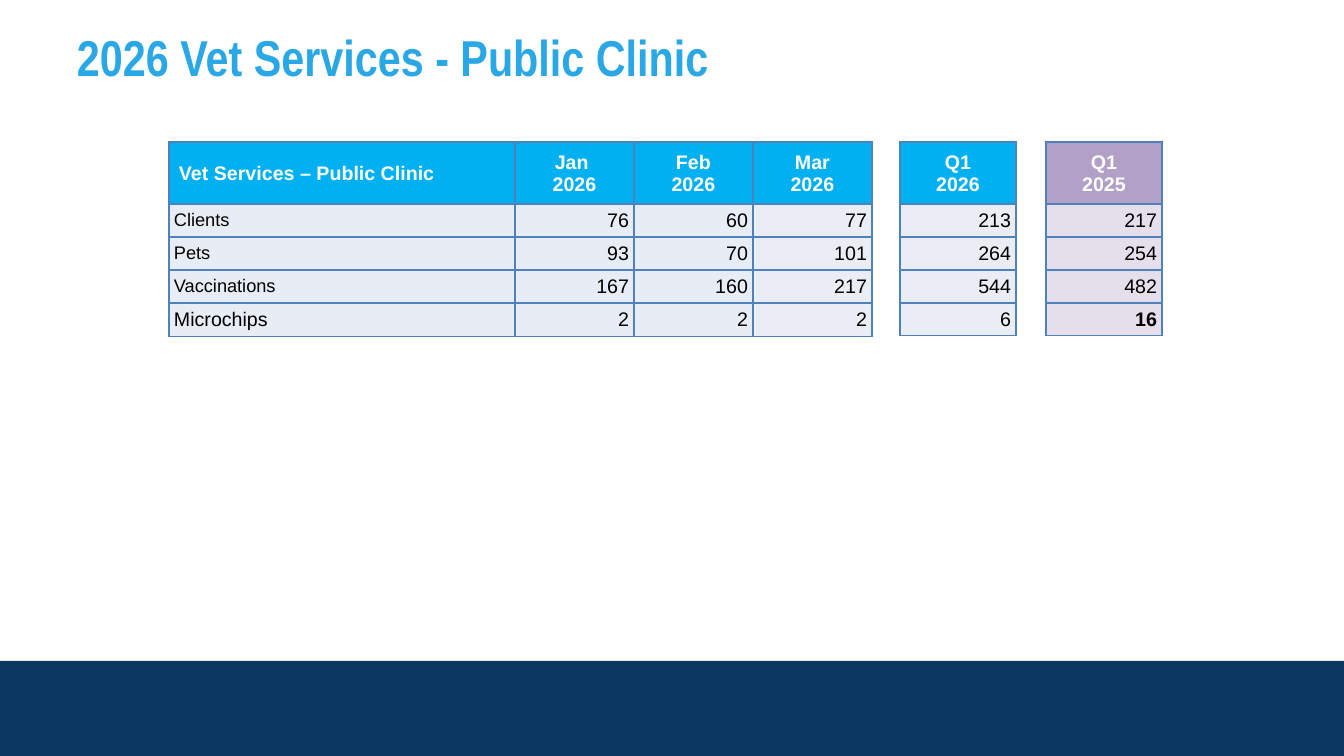
"""Build the 2026 public clinic vet services slide."""
from lxml import etree
from pptx import Presentation
from pptx.dml.color import RGBColor
from pptx.enum.shapes import MSO_SHAPE as Shape
from pptx.enum.text import MSO_ANCHOR as Anchor, PP_ALIGN as Align
from pptx.oxml.ns import qn
from pptx.util import Pt

TITLE = "2026 Vet Services - Public Clinic"
LABELS = ("Vet Services – Public Clinic", "Clients", "Pets", "Vaccinations", "Microchips")
JANUARY = ("Jan \n2026", "76", "93", "167", "2")
FEBRUARY = ("Feb\n2026", "60", "70", "160", "2")
MARCH = ("Mar\n2026", "77", "101", "217", "2")
QUARTER = ("Q1\n2026", "213", "264", "544", "6")
LAST_YEAR = ("Q1\n2025", "217", "254", "482", "16")

BLUE, PURPLE, GRID = "00B0F0", "B2A0C7", "4F81BD"
PALE, MIST, LILAC = "E8ECF4", "EAEEF4", "E5DFEC"
TABLES = (
    (169, ((346, LABELS, BLUE, PALE), (119, JANUARY, BLUE, PALE),
           (119, FEBRUARY, BLUE, PALE), (119, MARCH, BLUE, MIST))),
    (900, ((116, QUARTER, BLUE, MIST),)),
    (1046, ((116, LAST_YEAR, PURPLE, LILAC),)),
)
TABLE_TOP, HEADER_HEIGHT, ROW_HEIGHT = 142, 62, 33
HEADER_INSETS, LABEL_INSETS, VALUE_INSETS = (10, 1, 10, 0), (5, 5, 5, 5), (1, 1, 5, 0)


def px(length):
    return round(length * 914400 / 100.8)


def color(value):
    return RGBColor.from_string(value)


def set_insets(target, insets):
    sides = ("left", "top", "right", "bottom")
    for side, inset in zip(sides, insets):
        setattr(target, f"margin_{side}", px(inset))


def style_text(frame, size, tint, bold, align=Align.LEFT, name="Arial"):
    for para in frame.paragraphs:
        para.alignment = align
        for span in para.runs:
            font = span.font
            font.name, font.size, font.bold = name, Pt(size), bold
            font.color.rgb = color(tint)


def add_borders(cell):
    properties = cell._tc.get_or_add_tcPr()
    for index, side in enumerate(("lnL", "lnR", "lnT", "lnB")):
        line = etree.Element(qn(f"a:{side}"), w=str(Pt(1)))
        fill = etree.SubElement(line, qn("a:solidFill"))
        etree.SubElement(fill, qn("a:srgbClr"), val=GRID)
        properties.insert(index, line)


def fill_cell(cell, text, row, is_label, background):
    cell.text_frame.text = text
    cell.vertical_anchor = Anchor.MIDDLE
    cell.fill.solid()
    cell.fill.fore_color.rgb = color(background)
    add_borders(cell)
    if row == 0:
        set_insets(cell, HEADER_INSETS)
        style_text(cell.text_frame, 14, "FFFFFF", True, Align.LEFT if is_label else Align.CENTER)
    elif is_label:
        set_insets(cell, LABEL_INSETS)
        style_text(cell.text_frame, 14 if text == "Microchips" else 13, "000000", False)
    else:
        set_insets(cell, VALUE_INSETS)
        style_text(cell.text_frame, 14, "000000", text == "16", Align.RIGHT)


def add_data_table(slide, left, columns):
    heights = [HEADER_HEIGHT] + [ROW_HEIGHT] * (len(LABELS) - 1)
    width = sum(column[0] for column in columns)
    table = slide.shapes.add_table(len(heights), len(columns), px(left), px(TABLE_TOP),
                                   px(width), px(sum(heights))).table
    for row, height in enumerate(heights):
        table.rows[row].height = px(height)
    for index, (column_width, texts, header_fill, body_fill) in enumerate(columns):
        table.columns[index].width = px(column_width)
        for row, text in enumerate(texts):
            background = body_fill if row else header_fill
            fill_cell(table.cell(row, index), text, row, texts is LABELS, background)


def main():
    deck = Presentation()
    deck.slide_width, deck.slide_height = px(1344), px(756)
    slide = deck.slides.add_slide(deck.slide_layouts[6])

    footer = slide.shapes.add_shape(Shape.RECTANGLE, 0, px(661), px(1344), px(95))
    footer.shadow.inherit = False
    footer.fill.solid()
    footer.fill.fore_color.rgb = color("0B3761")
    footer.line.fill.background()

    title = slide.shapes.add_textbox(px(67), px(28), px(1210), px(57)).text_frame
    title.word_wrap = True
    title.vertical_anchor = Anchor.MIDDLE
    set_insets(title, (10, 5, 10, 5))
    title.text = TITLE
    style_text(title, 36, "2AA7E5", True, name="Arial Narrow")

    for left, columns in TABLES:
        add_data_table(slide, left, columns)
    deck.save("out.pptx")


if __name__ == "__main__":
    main()
